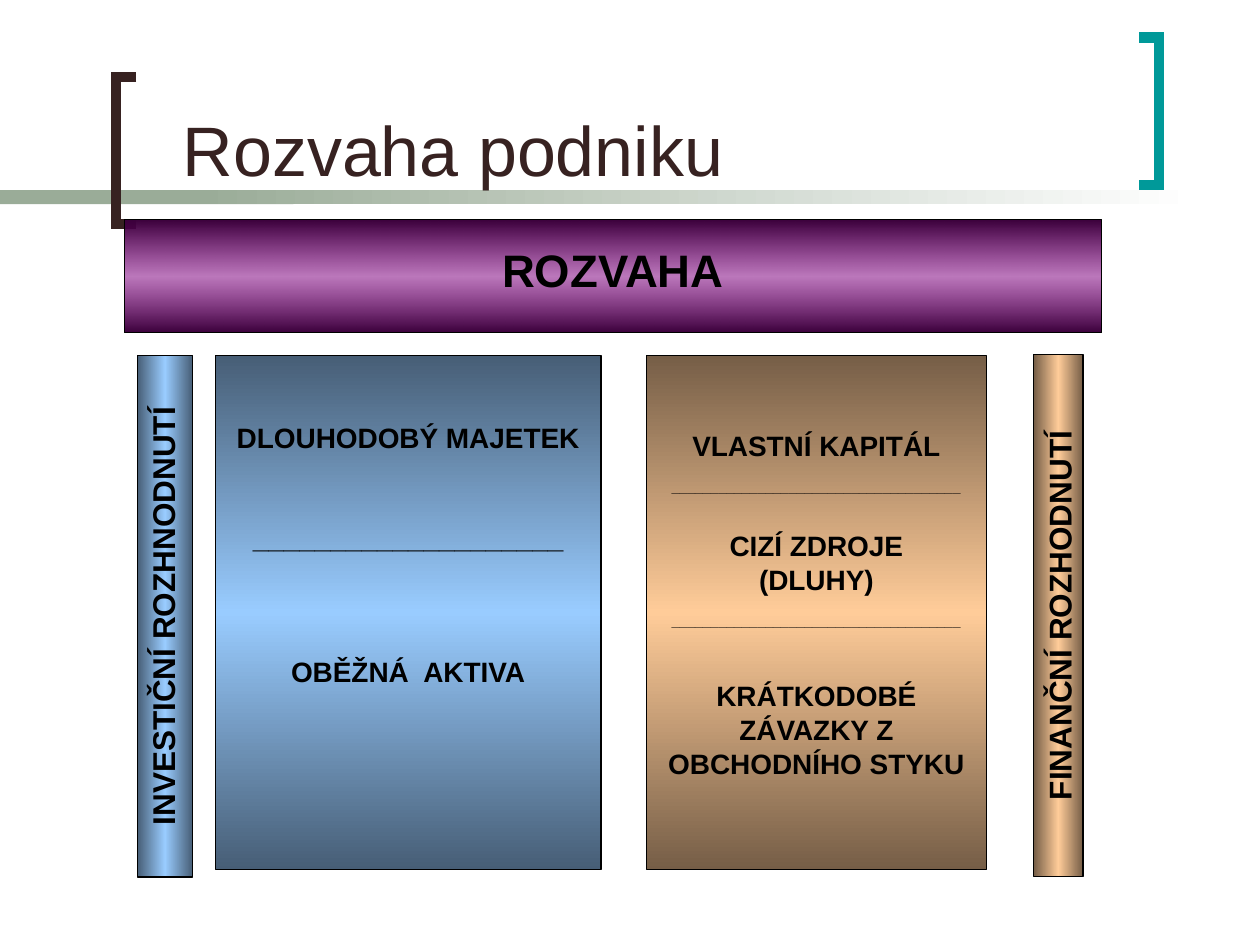
"""Build the balance sheet slide with its investment and financing sides."""
from lxml import etree
from pptx import Presentation
from pptx.dml.color import RGBColor
from pptx.enum.shapes import MSO_SHAPE
from pptx.enum.text import MSO_ANCHOR, PP_ALIGN
from pptx.oxml.ns import qn
from pptx.util import Inches, Pt

RECTANGLE = MSO_SHAPE.RECTANGLE
TOP, BOTTOM = MSO_ANCHOR.TOP, MSO_ANCHOR.BOTTOM
LEFT, CENTER = PP_ALIGN.LEFT, PP_ALIGN.CENTER
BLACK, BROWN, TEAL, SAGE, WHITE = "000000", "372221", "009999", "9AAC98", "FFFFFF"
PURPLE_BAND = [(0, "3B003B", 100), (50, "800080", 53), (100, "3B003B", 100)]
BLUE_BAND = [(0, "475E76", 100), (50, "99CCFF", 100), (100, "475E76", 100)]
ORANGE_BAND = [(0, "765E47", 100), (50, "FFCC99", 100), (100, "765E47", 100)]
FADE = [(0, SAGE, 100), (100, WHITE, 100)]


def color(value):
    return RGBColor.from_string(value)


def fill_gradient(shape, stops, angle):
    shape.fill.gradient()
    shape.fill.gradient_angle = angle
    stop_list = shape.fill._fill._gradFill.find(qn("a:gsLst"))
    for old_stop in list(stop_list):
        stop_list.remove(old_stop)
    for position, value, opacity in stops:
        stop = etree.SubElement(stop_list, qn("a:gs"), pos=str(position * 1000))
        stop_color = etree.SubElement(stop, qn("a:srgbClr"), val=value)
        if opacity < 100:
            etree.SubElement(stop_color, qn("a:alpha"), val=str(opacity * 1000))


presentation = Presentation()
presentation.slide_width, presentation.slide_height = Inches(10), Inches(7.5)
slide = presentation.slides.add_slide(presentation.slide_layouts[5])
shapes = slide.shapes

for left, width in ((0, 2.33), (1.58, 7.92)):
    band = shapes.add_shape(RECTANGLE, Inches(left), Inches(1.51), Inches(width), Inches(0.11))
    band.shadow.inherit = False
    band.line.fill.background()
    if left:
        fill_gradient(band, FADE, 0)
    else:
        band.fill.solid()
        band.fill.fore_color.rgb = color(SAGE)

for open_side, spine, top, line_color in ((1.08, 0.92, 0.61, BROWN), (9.04, 9.2, 0.3, TEAL)):
    bottom = top + 1.17
    builder = shapes.build_freeform(Inches(open_side), Inches(top))
    corners = [(spine, top), (spine, bottom), (open_side, bottom)]
    builder.add_line_segments([(Inches(x), Inches(y)) for x, y in corners], close=False)
    bracket = builder.convert_to_shape()
    bracket.shadow.inherit = False
    bracket.fill.background()
    bracket.line.color.rgb = color(line_color)
    bracket.line.width = Pt(6)
    etree.SubElement(bracket.line._ln, qn("a:miter"), lim="800000")

title = shapes.title
shapes._spTree.append(title._element)
title.left, title.top, title.width, title.height = map(Inches, (0.47, 0.31, 9, 1.25))
title.text_frame.text = "Rozvaha podniku"
title.text_frame.vertical_anchor = BOTTOM
title.text_frame.margin_left = Inches(0.98)
title.text_frame.paragraphs[0].alignment = LEFT
title_format = {"name": "Arial", "size": Pt(40), "bold": False}
for attribute, value in title_format.items():
    setattr(title.text_frame.paragraphs[0].font, attribute, value)
title.text_frame.paragraphs[0].font.color.rgb = color(BROWN)

asset_rule = ("_" * 20, 16, 38)
source_rule = ("_" * 37, 8, 9.5)
panels = [
    ((0.99, 1.74, 7.75, 0.9), 0, PURPLE_BAND, 0.18, [("ROZVAHA", 26, 0)]),
    ((-0.76, 4.67, 4.14, 0.44), 270, BLUE_BAND, 0.05, [("INVESTIČNÍ ROZHNODNUTÍ", 18, 0)]),
    ((6.33, 4.69, 4.14, 0.39), 270, ORANGE_BAND, 0.05, [("FINANČNÍ ROZHODNUTÍ", 18, 0)]),
    ((1.71, 2.82, 3.06, 4.08), 0, BLUE_BAND, 0.52,
     [("DLOUHODOBÝ MAJETEK", 16, 0), asset_rule, ("OBĚŽNÁ  AKTIVA", 16, 57)]),
    ((5.13, 2.82, 2.7, 4.08), 0, ORANGE_BAND, 0.58,
     [("VLASTNÍ KAPITÁL", 16, 0), source_rule, ("CIZÍ ZDROJE", 16, 19),
      ("(DLUHY)", 16, 0), source_rule, ("KRÁTKODOBÉ ZÁVAZKY Z OBCHODNÍHO STYKU", 16, 28.5)]),
]
for place, rotation, stops, margin_top, lines in panels:
    panel = shapes.add_shape(RECTANGLE, *map(Inches, place))
    panel.rotation = rotation
    panel.shadow.inherit = False
    fill_gradient(panel, stops, 90)
    panel.line.color.rgb = color(BLACK)
    panel.line.width = Pt(0.75)
    frame = panel.text_frame
    frame_format = {"word_wrap": True, "vertical_anchor": TOP, "margin_top": Inches(margin_top)}
    for attribute, value in frame_format.items():
        setattr(frame, attribute, value)
    for index, (text, size, space_before) in enumerate(lines):
        paragraph = frame.add_paragraph() if index else frame.paragraphs[0]
        paragraph.text = text
        paragraph.alignment = CENTER
        paragraph.space_before = Pt(space_before)
        font_format = {"name": "Arial", "size": Pt(size), "bold": True}
        for attribute, value in font_format.items():
            setattr(paragraph.font, attribute, value)
        paragraph.font.color.rgb = color(BLACK)

presentation.save("out.pptx")
